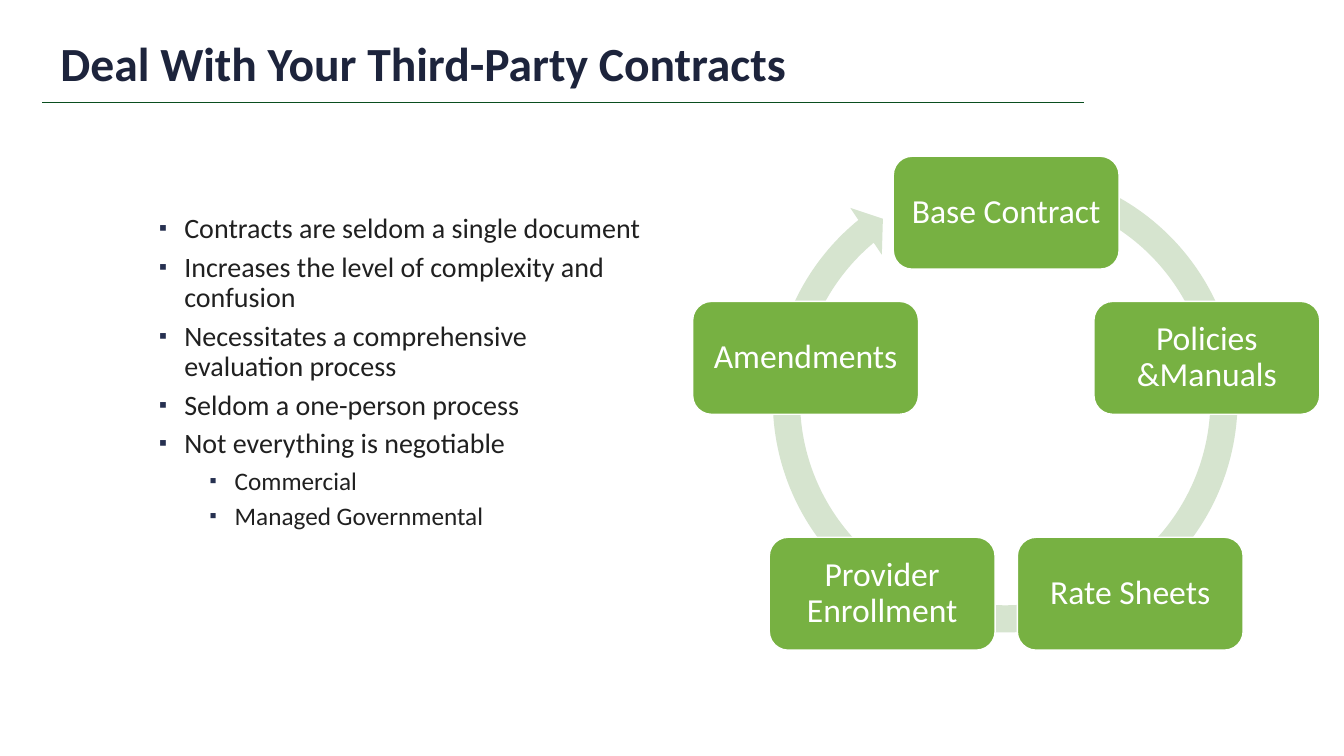
"""Build the slide on third-party contracts with a bullet list and a contract cycle."""
from dataclasses import dataclass
from math import cos, pi, sin

from lxml import etree
from pptx import Presentation
from pptx.dml.color import RGBColor
from pptx.enum.shapes import MSO_CONNECTOR, MSO_SHAPE
from pptx.enum.text import MSO_ANCHOR, MSO_AUTO_SIZE, PP_ALIGN
from pptx.oxml.ns import qn
from pptx.slide import Slide
from pptx.text.text import TextFrame, _Paragraph
from pptx.util import Pt

EMU_PER_PX = 9144
TITLE_ONLY = 5
STRAIGHT = MSO_CONNECTOR.STRAIGHT
ROUNDED = MSO_SHAPE.ROUNDED_RECTANGLE
CIRCULAR_ARROW = MSO_SHAPE.CIRCULAR_ARROW
LEFT, CENTER = PP_ALIGN.LEFT, PP_ALIGN.CENTER
TOP, MIDDLE, BOTTOM = MSO_ANCHOR.TOP, MSO_ANCHOR.MIDDLE, MSO_ANCHOR.BOTTOM
NO_AUTOFIT = MSO_AUTO_SIZE.NONE


@dataclass(frozen=True)
class Theme:
    font: str = "Calibri"
    title: str = "1D243C"
    rule: str = "0A4E1F"
    body: str = "202020"
    bullet: str = "263050"
    ring: str = "D6E4CF"
    step: str = "77B142"
    white: str = "FFFFFF"
    title_size: int = 34
    body_sizes: tuple[int, int] = (20, 18)
    step_size: int = 24
    line_spacing: float = 0.9


@dataclass(frozen=True)
class Box:
    left: int
    top: int
    width: int
    height: int

    def emu(self) -> tuple[int, int, int, int]:
        return px(self.left), px(self.top), px(self.width), px(self.height)


@dataclass(frozen=True)
class Bullet:
    text: str
    level: int = 0


@dataclass(frozen=True)
class Cycle:
    center_x: int
    center_y: int
    radius: int
    step_width: int
    step_height: int

    def step_box(self, index: int, count: int) -> Box:
        angle = 2 * pi * index / count
        return Box(
            round(self.center_x + self.radius * sin(angle) - self.step_width / 2),
            round(self.center_y - self.radius * cos(angle) - self.step_height / 2),
            self.step_width,
            self.step_height,
        )


THEME = Theme()
TITLE = "Deal With Your Third-Party Contracts"
TITLE_BOX = Box(50, 30, 1040, 66)
BODY_BOX = Box(147, 208, 500, 451)
RING_BOX = Box(752, 152, 490, 490)
RING_BAND, RING_HEAD = 27, 28
HEAD_ANGLE, END_ANGLE, START_ANGLE = 5.51, 230.51, 289.21
CYCLE = Cycle(998, 420, 209, 224, 112)
STEPS = ("Base Contract", "Policies &Manuals", "Rate Sheets", "Provider Enrollment", "Amendments")
BULLETS = (
    Bullet("Contracts are seldom a single document"),
    Bullet("Increases the level of complexity and confusion"),
    Bullet("Necessitates a comprehensive evaluation process"),
    Bullet("Seldom a one-person process"),
    Bullet("Not everything is negotiable"),
    Bullet("Commercial", 1),
    Bullet("Managed Governmental", 1),
)


def px(length: int) -> int:
    return length * EMU_PER_PX


def rgb(color: str) -> RGBColor:
    return RGBColor.from_string(color)


def apply(target: object, values: dict[str, object]) -> None:
    for name, value in values.items():
        setattr(target, name, value)


def format_frame(frame: TextFrame, anchor: MSO_ANCHOR) -> None:
    apply(frame, {"word_wrap": True, "auto_size": NO_AUTOFIT, "vertical_anchor": anchor})


def write(paragraph: _Paragraph, text: str, size: int, color: str,
          align: PP_ALIGN = LEFT, bold: bool = False) -> None:
    apply(paragraph, {"alignment": align, "line_spacing": THEME.line_spacing})
    run = paragraph.add_run()
    run.text = text
    apply(run.font, {"name": THEME.font, "size": Pt(size), "bold": bold})
    run.font.color.rgb = rgb(color)


def add_bullet_mark(paragraph: _Paragraph, level: int) -> None:
    properties = paragraph._p.get_or_add_pPr()
    properties.set("marL", str(px(26 + 50 * level)))
    properties.set("indent", str(px(-25)))
    color = etree.SubElement(properties, qn("a:buClr"))
    etree.SubElement(color, qn("a:srgbClr"), val=THEME.bullet)
    etree.SubElement(properties, qn("a:buSzPct"), val="80000")
    etree.SubElement(properties, qn("a:buFont"), typeface=THEME.font)
    etree.SubElement(properties, qn("a:buChar"), char="▪")


def add_title(slide: Slide) -> None:
    title = slide.shapes.title
    apply(title, dict(zip(("left", "top", "width", "height"), TITLE_BOX.emu())))
    format_frame(title.text_frame, BOTTOM)
    write(title.text_frame.paragraphs[0], TITLE, THEME.title_size, THEME.title, bold=True)


def add_rule(slide: Slide) -> None:
    rule = slide.shapes.add_connector(STRAIGHT, px(42), px(102), px(1075), px(102))
    rule.line.color.rgb = rgb(THEME.rule)
    rule.line.width = Pt(1)
    etree.SubElement(rule._element.spPr, qn("a:effectLst"))


def add_bullets(slide: Slide) -> None:
    frame = slide.shapes.add_textbox(*BODY_BOX.emu()).text_frame
    format_frame(frame, TOP)
    for index, bullet in enumerate(BULLETS):
        paragraph = frame.add_paragraph() if index else frame.paragraphs[0]
        apply(paragraph, {"level": bullet.level, "space_after": Pt(6)})
        add_bullet_mark(paragraph, bullet.level)
        write(paragraph, bullet.text, THEME.body_sizes[bullet.level], THEME.body)


def add_ring(slide: Slide) -> None:
    ring = slide.shapes.add_shape(CIRCULAR_ARROW, *RING_BOX.emu())
    ring.shadow.inherit = False
    ring.fill.solid()
    ring.fill.fore_color.rgb = rgb(THEME.ring)
    ring.line.fill.background()
    angles = [angle * 0.6 for angle in (HEAD_ANGLE, END_ANGLE, START_ANGLE)]
    settings = [RING_BAND / RING_BOX.width, *angles, RING_HEAD / RING_BOX.width]
    for index, value in enumerate(settings):
        ring.adjustments[index] = value


def add_step(slide: Slide, text: str, box: Box) -> None:
    step = slide.shapes.add_shape(ROUNDED, *box.emu())
    step.shadow.inherit = False
    step.fill.solid()
    step.fill.fore_color.rgb = rgb(THEME.step)
    step.line.color.rgb = rgb(THEME.white)
    step.line.width = Pt(1)
    format_frame(step.text_frame, MIDDLE)
    sides = ("left", "top", "right", "bottom")
    apply(step.text_frame, {f"margin_{side}": px(10) for side in sides})
    write(step.text_frame.paragraphs[0], text, THEME.step_size, THEME.white, CENTER)


def main() -> None:
    presentation = Presentation()
    apply(presentation, {"slide_width": px(1333), "slide_height": px(750)})
    slide = presentation.slides.add_slide(presentation.slide_layouts[TITLE_ONLY])
    add_rule(slide)
    add_title(slide)
    add_bullets(slide)
    add_ring(slide)
    for index, text in enumerate(STEPS):
        add_step(slide, text, CYCLE.step_box(index, len(STEPS)))
    presentation.save("out.pptx")


if __name__ == "__main__":
    main()
